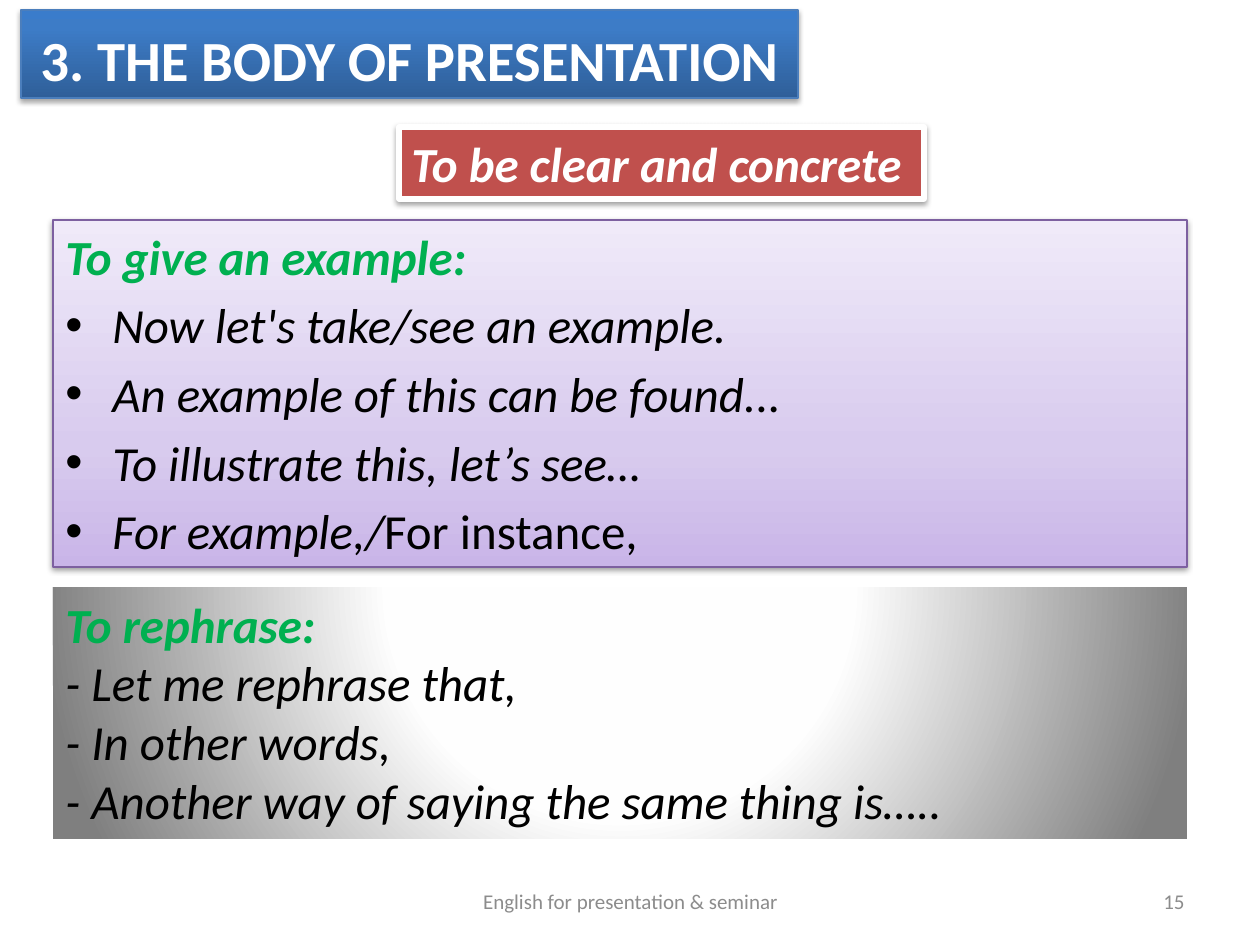
from dataclasses import dataclass
from typing import NamedTuple, Optional

from pptx import Presentation
from pptx.dml.color import RGBColor
from pptx.enum.shapes import MSO_SHAPE as Shape
from pptx.enum.text import MSO_ANCHOR as Anchor, PP_ALIGN as Align
from pptx.oxml import parse_xml
from pptx.oxml.ns import nsdecls, qn
from pptx.util import Emu, Pt

PX = 914400 / 126
FONT = "Calibri"
WHITE = RGBColor(0xFF, 0xFF, 0xFF)
BLACK = RGBColor(0x00, 0x00, 0x00)
GREEN = RGBColor(0x00, 0xB0, 0x50)
RED = RGBColor(0xC0, 0x50, 0x4D)
GREY = RGBColor(0x8C, 0x8C, 0x8C)
BLUE_LINE = RGBColor(0x4B, 0x7E, 0xBC)
PURPLE_LINE = RGBColor(0x7D, 0x60, 0xA0)
BLUES = ((0, RGBColor(0x2F, 0x5F, 0x99)), (80, RGBColor(0x3D, 0x7C, 0xC7)),
         (100, RGBColor(0x3A, 0x7C, 0xCB)))
PURPLES = ((0, RGBColor(0xC9, 0xB5, 0xE8)), (35, RGBColor(0xD8, 0xCB, 0xEE)),
           (100, RGBColor(0xF0, 0xEA, 0xF9)))
GREYS = ((0, WHITE), (40, RGBColor(0xFE, 0xFE, 0xFE)),
         (100, RGBColor(0x7F, 0x7F, 0x7F)))
LINEAR = '<a:lin ang="16200000" scaled="0"/>'
RADIAL = ('<a:path path="circle"><a:fillToRect l="50000" t="-80000" '
          'r="50000" b="180000"/></a:path>')


def px(n: int) -> Emu:
    return Emu(round(n * PX))


class Box(NamedTuple):
    x: int
    y: int
    w: int
    h: int

    def emu(self) -> list:
        return [px(n) for n in self]


@dataclass
class Panel:
    box: Box
    fill: Optional[RGBColor] = None
    stops: tuple = ()
    direction: str = LINEAR
    line: Optional[RGBColor] = None
    line_pt: float = 0.75
    shadow_pct: int = 0


def fill_gradient(s, stops: tuple, direction: str) -> None:
    gs = "".join(f'<a:gs pos="{pos * 1000}"><a:srgbClr val="{color}"/></a:gs>'
                 for pos, color in stops)
    s._element.spPr.find(qn("a:prstGeom")).addnext(parse_xml(
        f'<a:gradFill {nsdecls("a")} rotWithShape="1">'
        f'<a:gsLst>{gs}</a:gsLst>{direction}</a:gradFill>'))


def add_shadow(s, pct: int) -> None:
    s._element.spPr.find(qn("a:effectLst")).append(parse_xml(
        f'<a:outerShdw {nsdecls("a")} blurRad="{Pt(3.1)}" dist="{Pt(1.6)}" '
        f'dir="5400000" rotWithShape="0"><a:srgbClr val="000000">'
        f'<a:alpha val="{pct * 1000}"/></a:srgbClr></a:outerShdw>'))


def add_panel(slide, panel: Panel):
    s = slide.shapes.add_shape(Shape.RECTANGLE, *panel.box.emu())
    s.shadow.inherit = False
    if panel.stops:
        fill_gradient(s, panel.stops, panel.direction)
    else:
        s.fill.solid()
        s.fill.fore_color.rgb = panel.fill
    if panel.line is None:
        s.line.fill.background()
    else:
        s.line.color.rgb = panel.line
        s.line.width = Pt(panel.line_pt)
    if panel.shadow_pct:
        add_shadow(s, panel.shadow_pct)
    s.text_frame.word_wrap = True
    s.text_frame.vertical_anchor = Anchor.TOP
    return s


def add_run(p, text: str, *, size: float = 28, color: RGBColor = BLACK,
            bold: bool = False, italic: bool = False) -> None:
    r = p.add_run()
    r.text = text
    r.font.name, r.font.size = FONT, Pt(size)
    r.font.bold, r.font.italic = bold, italic
    r.font.color.rgb = color


def add_text(tf, text: str, *, align=Align.LEFT, before: float = 0,
             bullet: bool = False, **fmt):
    p = tf.paragraphs[0] if not tf.paragraphs[0].runs else tf.add_paragraph()
    p.alignment = align
    p.space_before = Pt(before)
    if bullet:
        pPr = p._p.get_or_add_pPr()
        pPr.set("marL", str(px(47)))
        pPr.set("indent", str(-px(47)))
        pPr.append(parse_xml(f'<a:buFont {nsdecls("a")} typeface="Arial"/>'))
        pPr.append(parse_xml(f'<a:buChar {nsdecls("a")} char="•"/>'))
    add_run(p, text, **fmt)
    return p


def add_footer(slide, box: Box, text: str, align) -> None:
    tf = slide.shapes.add_textbox(*box.emu()).text_frame
    tf.word_wrap = True
    tf.vertical_anchor = Anchor.MIDDLE
    add_text(tf, text, align=align, size=12, color=GREY)


def main() -> None:
    prs = Presentation()
    prs.slide_width, prs.slide_height = px(1260), px(945)
    slide = prs.slides.add_slide(prs.slide_layouts[6])
    heading = dict(color=GREEN, bold=True, italic=True)

    # Examples
    tf = add_panel(slide, Panel(Box(53, 220, 1134, 347), stops=PURPLES,
                                line=PURPLE_LINE, shadow_pct=38)).text_frame
    add_text(tf, "To give an example:", before=5.6, **heading)
    for text in ("Now let's take/see an example.",
                 "An example of this can be found...",
                 "To illustrate this, let’s see…",
                 "For example,/"):
        p = add_text(tf, text, before=5.6, bullet=True, italic=True)
    add_run(p, "For instance,")

    # Title
    tf = add_panel(slide, Panel(Box(21, 10, 777, 88), stops=BLUES,
                                line=BLUE_LINE, shadow_pct=35)).text_frame
    tf.word_wrap = False
    tf.vertical_anchor = Anchor.MIDDLE
    tf.margin_top, tf.margin_bottom = px(14), px(4)
    add_text(tf, "3. THE BODY OF PRESENTATION", align=Align.CENTER,
             size=32.4, color=WHITE, bold=True)

    # Subtitle
    tf = add_panel(slide, Panel(Box(399, 127, 525, 72), fill=RED, line=WHITE,
                                line_pt=3, shadow_pct=38)).text_frame
    add_text(tf, "To be clear and concrete", color=WHITE, bold=True, italic=True)

    # Rephrasing
    tf = add_panel(slide, Panel(Box(53, 588, 1134, 251), stops=GREYS,
                                direction=RADIAL)).text_frame
    add_text(tf, "To rephrase:", **heading)
    for text in ("Let me rephrase that,", "In other words,",
                 "Another way of saying the same thing is….."):
        add_text(tf, f"- {text}", italic=True)

    # Footer
    add_footer(slide, Box(903, 876, 294, 50), "15", Align.RIGHT)
    add_footer(slide, Box(431, 876, 399, 50),
               "English for presentation & seminar", Align.CENTER)
    prs.save("out.pptx")


if __name__ == "__main__":
    main()
